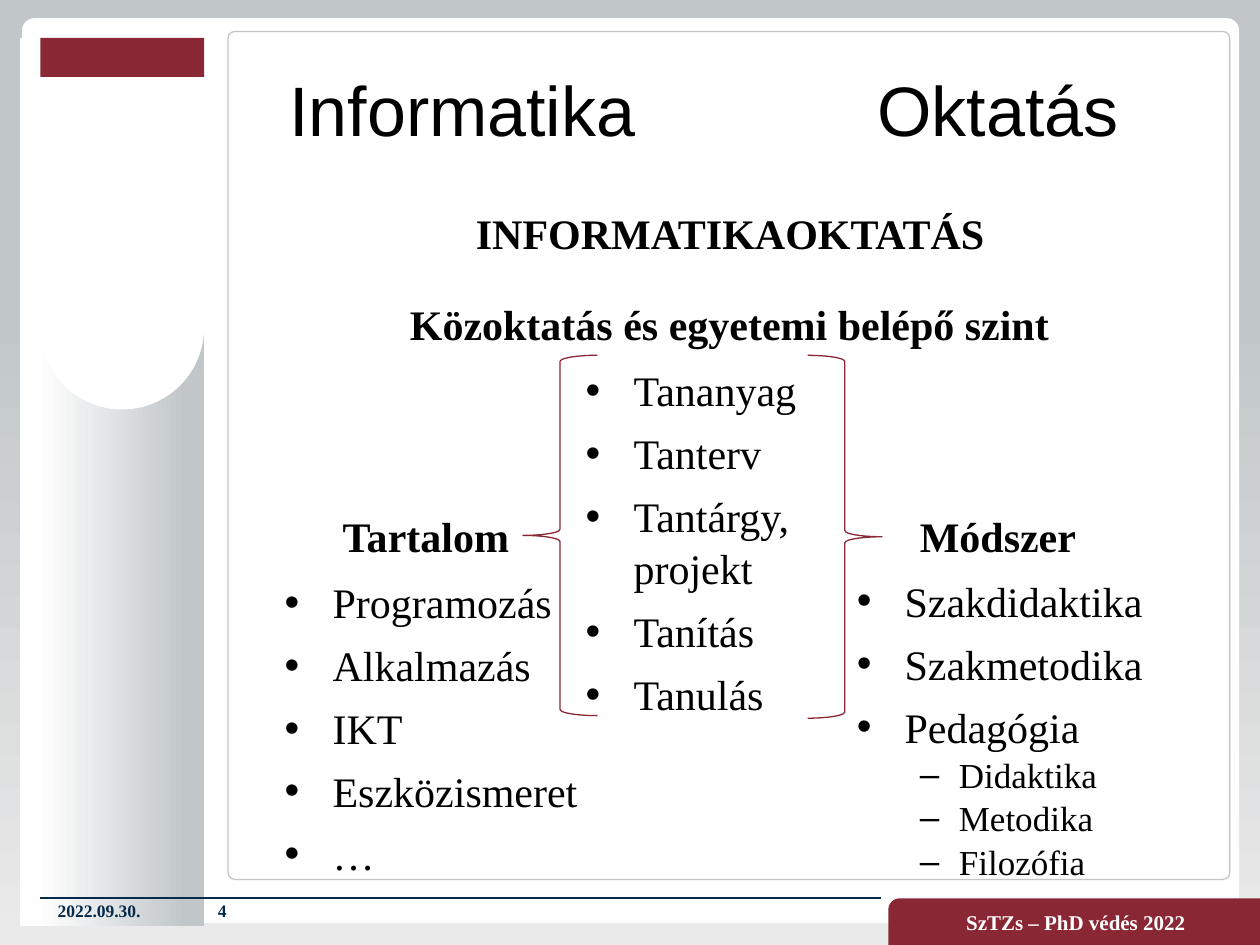
from dataclasses import dataclass
from typing import Optional

import lxml.etree
import pptx
import pptx.dml.color
import pptx.enum.shapes
import pptx.enum.text
import pptx.oxml.ns
import pptx.util

Inches, Pt = pptx.util.Inches, pptx.util.Pt
SHAPE = pptx.enum.shapes.MSO_SHAPE
ALIGN = pptx.enum.text.PP_ALIGN
ANCHOR = pptx.enum.text.MSO_ANCHOR
qn = pptx.oxml.ns.qn

WHITE, BLACK, GREY = "FFFFFF", "000000", "C1C6C8"
RED, NAVY = "8A2734", "052A4B"
SERIF, SANS = "Times New Roman", "Arial"


@dataclass
class Panel:
    kind: int
    box: tuple
    fill: Optional[str] = None
    line: Optional[str] = None
    adj: Optional[float] = None


@dataclass
class Label:
    text: str
    box: tuple
    idx: Optional[int] = None
    size: int = 24
    font: str = SERIF
    bold: bool = True
    color: str = BLACK
    align: int = ALIGN.CENTER
    anchor: int = ANCHOR.BOTTOM


@dataclass
class Bullets:
    items: tuple
    box: tuple
    idx: Optional[int] = None
    subitems: tuple = ()


@dataclass
class Level:
    char: str
    margin: float
    hang: float
    size: int
    before: int


LEVELS = (Level("•", 0.38, 0.38, 24, 6), Level("–", 0.81, 0.31, 20, 0))

PANELS = (
    Panel(SHAPE.ROUNDED_RECTANGLE, (0.18, 0.15, 9.65, 7.17), WHITE, WHITE, 0.013),
    Panel(SHAPE.RECTANGLE, (0.16, 0.3, 1.46, 7.05), "gradient"),
    Panel(SHAPE.ROUNDED_RECTANGLE, (1.81, 0.25, 7.95, 6.73), WHITE, GREY, 0.008),
    Panel(SHAPE.RECTANGLE, (0.32, 0.3, 1.3, 2.36), WHITE),
    Panel(SHAPE.RECTANGLE, (0.32, 0.3, 1.3, 0.31), RED),
    Panel(SHAPE.OVAL, (0.32, 1.95, 1.3, 1.3), WHITE),
)
BRACES = (
    Panel(SHAPE.LEFT_BRACE, (4.15, 2.82, 0.59, 2.86), line=RED),
    Panel(SHAPE.RIGHT_BRACE, (6.41, 2.82, 0.59, 2.88), line=RED),
)
FOOTER = Panel(SHAPE.ROUND_1_RECTANGLE, (7.05, 7.13, 2.95, 0.37), RED, adj=0.244)
FOOTER_TEXT = Label("SzTZs – PhD védés 2022", FOOTER.box, size=12, color=WHITE,
                    anchor=ANCHOR.MIDDLE)

SMALL = dict(size=10, color=NAVY, align=ALIGN.LEFT, anchor=ANCHOR.MIDDLE)
TITLE = dict(size=40, font=SANS, bold=False, anchor=ANCHOR.MIDDLE)
LABELS = (
    Label("4", (1.63, 7.13, 0.39, 0.2), **SMALL),
    Label("2022.09.30.", (0.36, 7.13, 0.98, 0.2), **SMALL),
    Label("Informatika", (1.84, 0.31, 3.66, 1.1), 0, **TITLE),
    Label("Oktatás", (6.09, 0.31, 3.66, 1.1), **TITLE),
    Label("Tartalom", (2.16, 4.11, 2.44, 0.39), 1),
    Label("Módszer", (6.7, 4.11, 2.44, 0.39), 3),
    Label("INFORMATIKAOKTATÁS", (1.84, 1.4, 7.91, 0.7)),
    Label("Közoktatás és egyetemi belépő szint", (3.02, 2.12, 5.54, 0.7)),
)
LISTS = (
    Bullets(("Programozás", "Alkalmazás", "IKT", "Eszközismeret", "…"),
            (2.16, 4.51, 2.56, 2.47), 2),
    Bullets(("Szakdidaktika", "Szakmetodika", "Pedagógia"),
            (6.7, 4.5, 2.56, 2.47), 4, ("Didaktika", "Metodika", "Filozófia")),
    Bullets(("Tananyag", "Tanterv", "Tantárgy, projekt", "Tanítás", "Tanulás"),
            (4.55, 2.83, 2.48, 2.86)),
)


def rgb(color: str):
    return pptx.dml.color.RGBColor.from_string(color)


def set_all(target, values: dict):
    for name, value in values.items():
        setattr(target, name, value)


def gradient(fill, angle: int, stops: tuple):
    fill.gradient()
    fill.gradient_angle = angle
    for stop, (position, color) in zip(fill.gradient_stops, stops):
        stop.position = position
        stop.color.rgb = rgb(color)


def draw_panel(s, panel: Panel):
    sp = s.shapes.add_shape(panel.kind, *map(Inches, panel.box))
    sp.shadow.inherit = False
    if panel.fill == "gradient":
        gradient(sp.fill, 180, ((0.1, GREY), (0.9, WHITE)))
    elif panel.fill:
        sp.fill.solid()
        sp.fill.fore_color.rgb = rgb(panel.fill)
    else:
        sp.fill.background()
    if panel.line:
        sp.line.color.rgb = rgb(panel.line)
        sp.line.width = Pt(0.75)
    else:
        sp.line.fill.background()
    if panel.adj is not None:
        sp.adjustments[0] = panel.adj
    return sp


def text_shape(s, box: tuple, idx: Optional[int]):
    lengths = [Inches(v) for v in box]
    if idx is None:
        return s.shapes.add_textbox(*lengths)
    sp = next(ph for ph in s.placeholders if ph.placeholder_format.idx == idx)
    set_all(sp, dict(zip(("left", "top", "width", "height"), lengths)))
    sp._element.getparent().append(sp._element)
    return sp


def set_frame(sp, anchor: int):
    set_all(sp.text_frame, dict(word_wrap=True, vertical_anchor=anchor,
                                auto_size=pptx.enum.text.MSO_AUTO_SIZE.NONE))
    return sp.text_frame


def add_run(p, text: str, size: int, font: str, bold: bool, color: str):
    r = p.add_run()
    r.text = text
    set_all(r.font, dict(size=Pt(size), name=font, bold=bold))
    r.font.color.rgb = rgb(color)


def write_label(sp, label: Label):
    p = set_frame(sp, label.anchor).paragraphs[0]
    set_all(p, dict(alignment=label.align, space_before=Pt(0)))
    add_run(p, label.text, label.size, label.font, label.bold, label.color)


def draw_list(s, bullets: Bullets):
    tf = set_frame(text_shape(s, bullets.box, bullets.idx), ANCHOR.TOP)
    rows = [(t, 0) for t in bullets.items] + [(t, 1) for t in bullets.subitems]
    for i, (text, depth) in enumerate(rows):
        level = LEVELS[depth]
        p = tf.add_paragraph() if i else tf.paragraphs[0]
        set_all(p, dict(level=depth, alignment=ALIGN.LEFT, line_spacing=1.04,
                        space_before=Pt(level.before if i else 0)))
        pPr = p._p.get_or_add_pPr()
        pPr.set("marL", str(Inches(level.margin)))
        pPr.set("indent", str(-Inches(level.hang)))
        lxml.etree.SubElement(pPr, qn("a:buFont")).set("typeface", SANS)
        lxml.etree.SubElement(pPr, qn("a:buChar")).set("char", level.char)
        add_run(p, text, level.size, SERIF, False, BLACK)


def draw_rule(s):
    rule = s.shapes.add_connector(pptx.enum.shapes.MSO_CONNECTOR.STRAIGHT,
                                  *map(Inches, (0.32, 7.13, 6.99, 7.13)))
    rule.line.color.rgb = rgb(NAVY)
    rule.line.width = Pt(1.25)
    lxml.etree.SubElement(rule._element.spPr, qn("a:effectLst"))


def main():
    prs = pptx.Presentation()
    set_all(prs, dict(slide_width=Inches(10), slide_height=Inches(7.5)))
    s = prs.slides.add_slide(prs.slide_layouts.get_by_name("Comparison"))
    gradient(s.background.fill, 270, ((0.33, GREY), (1, "EAEAEA")))
    for panel in PANELS:
        draw_panel(s, panel)
    draw_rule(s)
    footer = draw_panel(s, FOOTER)
    footer._element.spPr.find(qn("a:xfrm")).set("flipH", "1")
    write_label(footer, FOOTER_TEXT)
    for label in LABELS:
        write_label(text_shape(s, label.box, label.idx), label)
    for bullets in LISTS:
        draw_list(s, bullets)
    for brace in BRACES:
        draw_panel(s, brace)
    prs.save("out.pptx")


if __name__ == "__main__":
    main()
